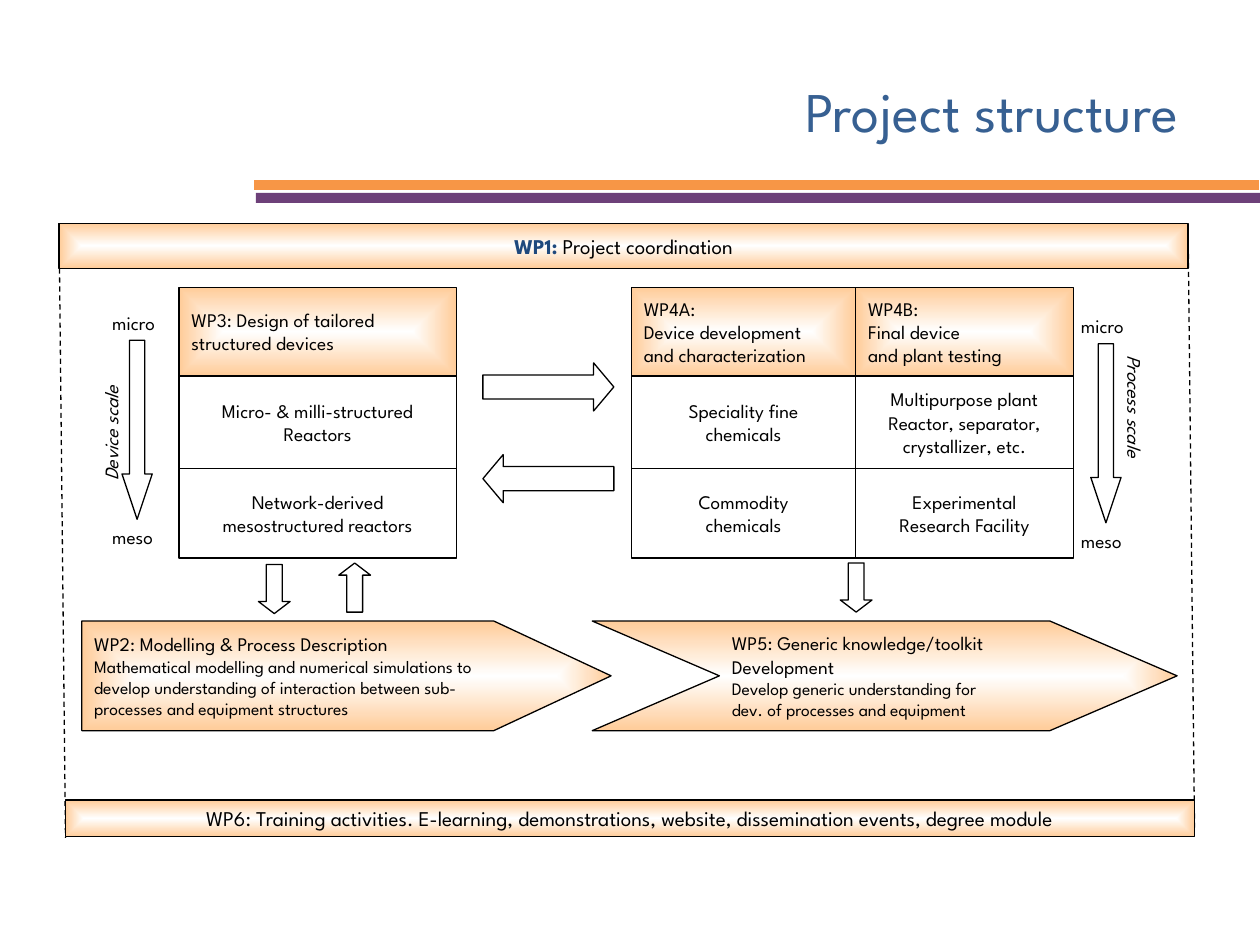
"""Build the project structure slide with its work packages and flow arrows."""
from lxml.etree import SubElement
from pptx import Presentation
from pptx.dml.color import RGBColor
from pptx.enum.dml import MSO_LINE
from pptx.enum.shapes import MSO_CONNECTOR, MSO_SHAPE as Kind
from pptx.enum.text import MSO_ANCHOR, MSO_AUTO_SIZE, PP_ALIGN as Align
from pptx.oxml.ns import qn
from pptx.util import Cm, Pt

BLACK = RGBColor(0x00, 0x00, 0x00)
WHITE = RGBColor(0xFF, 0xFF, 0xFF)
PEACH = RGBColor(0xFF, 0xCC, 0x99)
ORANGE = RGBColor(0xF7, 0x96, 0x46)
PURPLE = RGBColor(0x55, 0x21, 0x63)
NAVY = RGBColor(0x1F, 0x49, 0x7D)
BLUE = RGBColor(0x37, 0x60, 0x92)
FONT = "League Spartan"

prs = Presentation()
prs.slide_width, prs.slide_height = Cm(25.4), Cm(19.05)
slide = prs.slides.add_slide(prs.slide_layouts[6])
shapes = slide.shapes


def write(frame, lines, align=Align.LEFT, size=11, color=BLACK, small_from=9):
    for index, line in enumerate(lines):
        paragraph = frame.paragraphs[0] if index == 0 else frame.add_paragraph()
        paragraph.text = line
        paragraph.alignment = align
        paragraph.font.name = FONT
        paragraph.font.size = Pt(10 if index >= small_from else size)
        paragraph.font.color.rgb = color


def add_block(kind, left, top, width, height, adjustments=(), glow=None, rotation=0):
    block = shapes.add_shape(kind, Cm(left), Cm(top), Cm(width), Cm(height))
    block.shadow.inherit = False
    block.rotation = rotation
    block.line.color.rgb = BLACK
    block.line.width = Pt(0.75)
    for index, value in enumerate(adjustments):
        block.adjustments[index] = value
    if glow:
        block.fill.gradient()
        for stop, color in zip(block.fill.gradient_stops, (WHITE, PEACH)):
            stop.color.rgb = color
        gradient = block.element.spPr.find(qn("a:gradFill"))
        gradient.remove(gradient.find(qn("a:lin")))
        centre = SubElement(gradient, qn("a:path"), {"path": glow})
        SubElement(centre, qn("a:fillToRect"), dict.fromkeys("ltrb", "50000"))
    else:
        block.fill.background()
    block.text_frame.word_wrap = False
    block.text_frame.vertical_anchor = MSO_ANCHOR.MIDDLE
    return block


rules = [
    (5.16, 3.99, 25.4, 3.99, PURPLE, 5.75, MSO_LINE.SOLID),
    (5.13, 3.73, 25.37, 3.73, ORANGE, 5.75, MSO_LINE.SOLID),
    (1.19, 4.5, 1.32, 16.89, BLACK, 0.75, MSO_LINE.DASH),
    (23.95, 4.57, 24.08, 16.71, BLACK, 0.75, MSO_LINE.DASH),
]
for x1, y1, x2, y2, color, weight, dash in rules:
    rule = shapes.add_connector(MSO_CONNECTOR.STRAIGHT, Cm(x1), Cm(y1), Cm(x2), Cm(y2))
    rule.line.color.rgb = color
    rule.line.width = Pt(weight)
    rule.line.dash_style = dash
    if color == PURPLE:
        SubElement(rule.line.fill.fore_color._xFill.find(qn("a:srgbClr")), qn("a:alpha"), val="85000")
    SubElement(rule._element.spPr, qn("a:effectLst"))

title = shapes.add_textbox(Cm(5.36), Cm(1.02), Cm(18.64), Cm(2.39)).text_frame
title.word_wrap = True
title.vertical_anchor = MSO_ANCHOR.MIDDLE
write(title, ["Project structure"], Align.RIGHT, 32, BLUE)

coordination = add_block(Kind.RECTANGLE, 1.19, 4.5, 22.76, 0.91, glow="shape").text_frame
write(coordination, [""], Align.CENTER, 12)
for text, bold, color in (("WP1:", True, NAVY), (" Project coordination", False, BLACK)):
    run = coordination.paragraphs[0].add_run()
    run.text = text
    run.font.bold = bold
    run.font.color.rgb = color

training = add_block(Kind.RECTANGLE, 1.32, 16.13, 22.76, 0.74, glow="shape")
write(training.text_frame, [
    "WP6: Training activities. E-learning, demonstrations, website, "
    "dissemination events, degree module"], Align.CENTER, 12)

row_edges = [5.79, 7.58, 9.45, 11.25]
packages = [
    (3.61, 5.59, [
        ["WP3: Design of tailored", "structured devices"],
        ["Micro- & milli-structured", "Reactors"],
        ["Network-derived", "mesostructured reactors"]]),
    (12.73, 4.52, [
        ["WP4A:", "Device development", "and characterization"],
        ["Speciality fine", "chemicals"],
        ["Commodity", "chemicals"]]),
    (17.25, 4.39, [
        ["WP4B:", "Final device", "and plant testing"],
        ["Multipurpose plant", "Reactor, separator,", "crystallizer, etc."],
        ["Experimental", "Research Facility"]]),
]
for left, width, cells in packages:
    for row, lines in enumerate(cells):
        top, bottom = row_edges[row:row + 2]
        heading = row == 0
        cell = add_block(Kind.RECTANGLE, left, top, width, bottom - top,
                         glow="shape" if heading else None)
        write(cell.text_frame, lines, Align.LEFT if heading else Align.CENTER)

modelling = add_block(Kind.PENTAGON, 1.65, 12.52, 10.67, 2.21, [1.07], "shape")
write(modelling.text_frame, [
    "WP2: Modelling & Process Description",
    "Mathematical modelling and numerical simulations to",
    "develop understanding of interaction between sub-",
    "processes and equipment structures"], small_from=1)

toolkit = add_block(Kind.CHEVRON, 11.94, 12.52, 11.79, 2.21, [1.16], "rect")
write(toolkit.text_frame, [
    "WP5: Generic knowledge/toolkit",
    "Development",
    "Develop generic understanding for",
    "dev. of processes and equipment"], small_from=2)

scales = [
    (2.01, 6.15, "Device scale", 0.69, 8.03, 3.1, 270),
    (21.54, 6.22, "Process scale", 21.06, 8.36, 3.63, 90),
]
for left, top, name, name_left, name_top, name_width, turn in scales:
    add_block(Kind.DOWN_ARROW, left + 0.45, top + 0.71, 0.61, 3.61, [0.5, 1.5])
    labels = [
        ("micro", left, top, 1.6, 0),
        ("meso", left, top + 4.32, 1.55, 0),
        (name, name_left, name_top, name_width, turn),
    ]
    for text, x, y, width, rotation in labels:
        label = shapes.add_textbox(Cm(x), Cm(y), Cm(width), Cm(0.73))
        label.rotation = rotation
        label.text_frame.word_wrap = rotation != 0
        label.text_frame.auto_size = MSO_AUTO_SIZE.SHAPE_TO_FIT_TEXT
        write(label.text_frame, [text])
        label.text_frame.paragraphs[0].font.italic = rotation != 0

for left, top, rotation in ((5.21, 11.38, 0), (6.83, 11.35, 180), (16.94, 11.35, 0)):
    add_block(Kind.DOWN_ARROW, left, top, 0.64, 0.99, [0.5, 0.38], rotation=rotation)
for top, rotation in ((6.48, 270), (8.33, 90)):
    add_block(Kind.DOWN_ARROW, 10.57, top, 0.97, 2.64, [0.5, 0.42], rotation=rotation)

prs.save("out.pptx")
